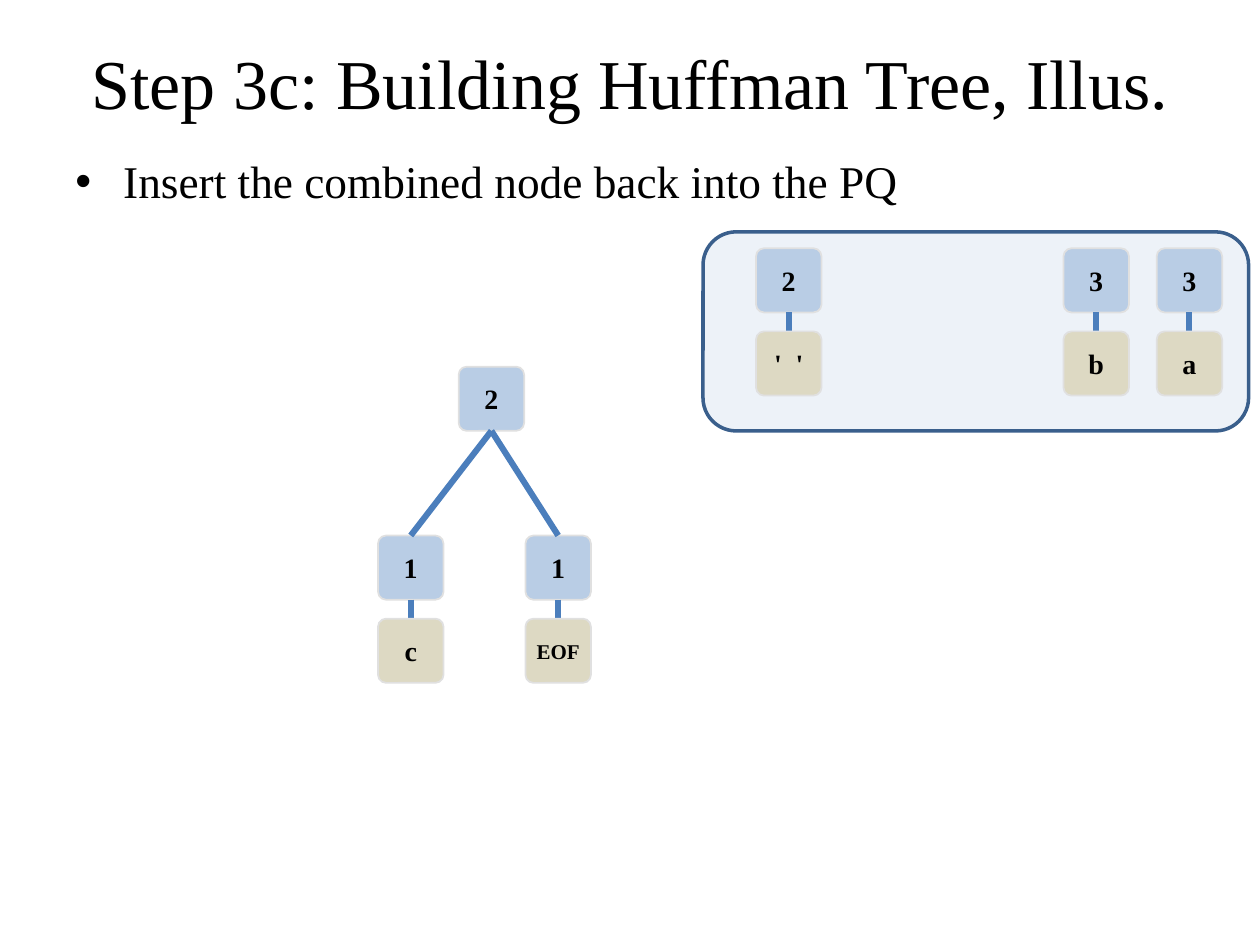
from lxml import etree
from pptx import Presentation
from pptx.dml.color import RGBColor
from pptx.enum import shapes as kinds, text
from pptx.oxml.ns import qn
from pptx.util import Inches, Pt

FONT = "Times New Roman"
NODE_WIDTH, NODE_HEIGHT, LEAF_DROP = 0.52, 0.51, 0.66
COUNT_FILL, SYMBOL_FILL = "B9CDE5", "DDD9C3"


def paint(target, color):
    """Give a fill, or a line's fill, a solid colour from a hex string."""
    target.solid()
    target.fore_color.rgb = RGBColor.from_string(color)


def assign(target, values):
    """Set attributes from a dict of format values."""
    for name, value in values.items():
        setattr(target, name, value)


def write(shape, words, size, bold=False, align=text.PP_ALIGN.CENTER,
          anchor=text.MSO_ANCHOR.MIDDLE, wrap=True):
    """Write one formatted paragraph in a shape and return it."""
    frame = shape.text_frame
    assign(frame, {"word_wrap": wrap, "vertical_anchor": anchor,
                   "auto_size": text.MSO_AUTO_SIZE.NONE})
    para = frame.paragraphs[0]
    para.alignment = align
    span = para.add_run()
    span.text = words
    assign(span.font, {"name": FONT, "size": Pt(size), "bold": bold})
    paint(span.font.fill, "000000")
    return para


def add_round_box(shapes, box, fill, line, width):
    """Add a rounded rectangle with a fill and an outline."""
    shape = shapes.add_shape(kinds.MSO_SHAPE.ROUNDED_RECTANGLE, *map(Inches, box))
    shape.shadow.inherit = False
    paint(shape.fill, fill)
    paint(shape.line.fill, line)
    shape.line.width = Pt(width)
    return shape


def add_node(shapes, left, top, label, fill, size=16):
    """Add one labelled tree node."""
    node = add_round_box(shapes, (left, top, NODE_WIDTH, NODE_HEIGHT), fill, "E0E0E0", 1)
    node.adjustments[0] = 0.126
    write(node, label, size, bold=True, wrap=False)


def add_edge(shapes, start, end):
    """Add a straight edge between two points."""
    edge = shapes.add_connector(kinds.MSO_CONNECTOR.STRAIGHT, *map(Inches, start + end))
    paint(edge.line.fill, "4B7EBC")
    edge.line.width = Pt(3.5)
    etree.SubElement(edge._element.spPr, qn("a:effectLst"))


def add_leaf(shapes, left, top, count, symbol, size=16):
    """Add a count node joined to the symbol node below it."""
    middle = left + NODE_WIDTH / 2
    add_node(shapes, left, top, count, COUNT_FILL)
    add_edge(shapes, (middle, top + NODE_HEIGHT), (middle, top + LEAF_DROP))
    add_node(shapes, left, top + LEAF_DROP, symbol, SYMBOL_FILL, size)


def add_title(page, box):
    """Place and format the slide title."""
    title = page.shapes.title
    assign(title, dict(zip(("left", "top", "width", "height"), map(Inches, box))))
    write(title, "Step 3c: Building Huffman Tree, Illus.", 40)


def add_bullet(page, box):
    """Add the bulleted instruction."""
    shape = page.shapes.add_textbox(*map(Inches, box))
    para = write(shape, "Insert the combined node back into the PQ", 25.9,
                 align=text.PP_ALIGN.LEFT, anchor=text.MSO_ANCHOR.TOP)
    para.space_before = Pt(5)
    props = para._p.get_or_add_pPr()
    props.set("marL", str(Inches(0.38)))
    props.set("indent", str(Inches(-0.38)))
    etree.SubElement(props, qn("a:buFont"), typeface="Arial")
    etree.SubElement(props, qn("a:buChar"), char="•")


def add_queue(page, box):
    """Add the priority queue panel and its waiting leaves."""
    panel = add_round_box(page.shapes, box, "4F81BD", "3A5F8C", 2)
    color = panel._element.spPr.find(qn("a:solidFill"))[0]
    etree.SubElement(color, qn("a:alpha"), val="10000")
    left, top = box[:2]
    for offset, count, symbol in ((0.42, "2", "'  '"), (2.86, "3", "b"), (3.6, "3", "a")):
        group = page.shapes.add_group_shape()
        add_leaf(group.shapes, left + offset, top + 0.13, count, symbol)


def add_tree(page, left, top):
    """Add the combined node with its two leaves."""
    shapes = page.shapes.add_group_shape().shapes
    root_left, leaf_top = left + 0.64, top + 1.34
    root_foot = (root_left + NODE_WIDTH / 2, top + NODE_HEIGHT)
    add_node(shapes, root_left, top, "2", COUNT_FILL)
    for offset, symbol, size in ((0, "c", 16), (1.17, "EOF", 12)):
        add_leaf(shapes, left + offset, leaf_top, "1", symbol, size)
        add_edge(shapes, root_foot, (left + offset + NODE_WIDTH / 2, leaf_top))


def main():
    """Build and save the slide."""
    deck = Presentation()
    assign(deck, {"slide_width": Inches(10), "slide_height": Inches(7.5)})
    page = deck.slides.add_slide(deck.slide_layouts.get_by_name("Title Only"))
    add_title(page, (0.5, 0.3, 9, 0.7))
    add_bullet(page, (0.5, 1.17, 9, 0.5))
    add_queue(page, (5.58, 1.84, 4.33, 1.58))
    add_tree(page, 3, 2.91)
    deck.save("out.pptx")


if __name__ == "__main__":
    main()
